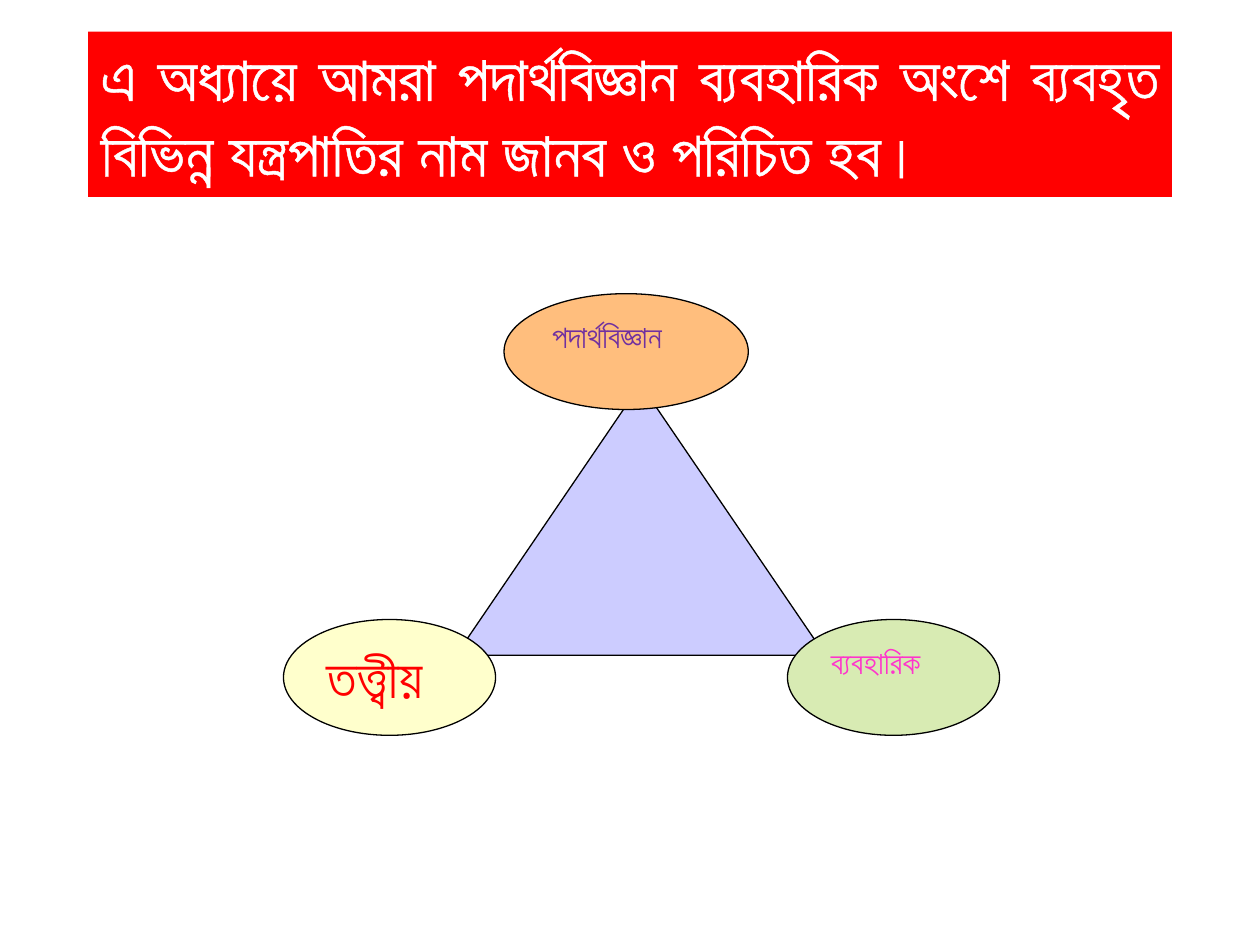
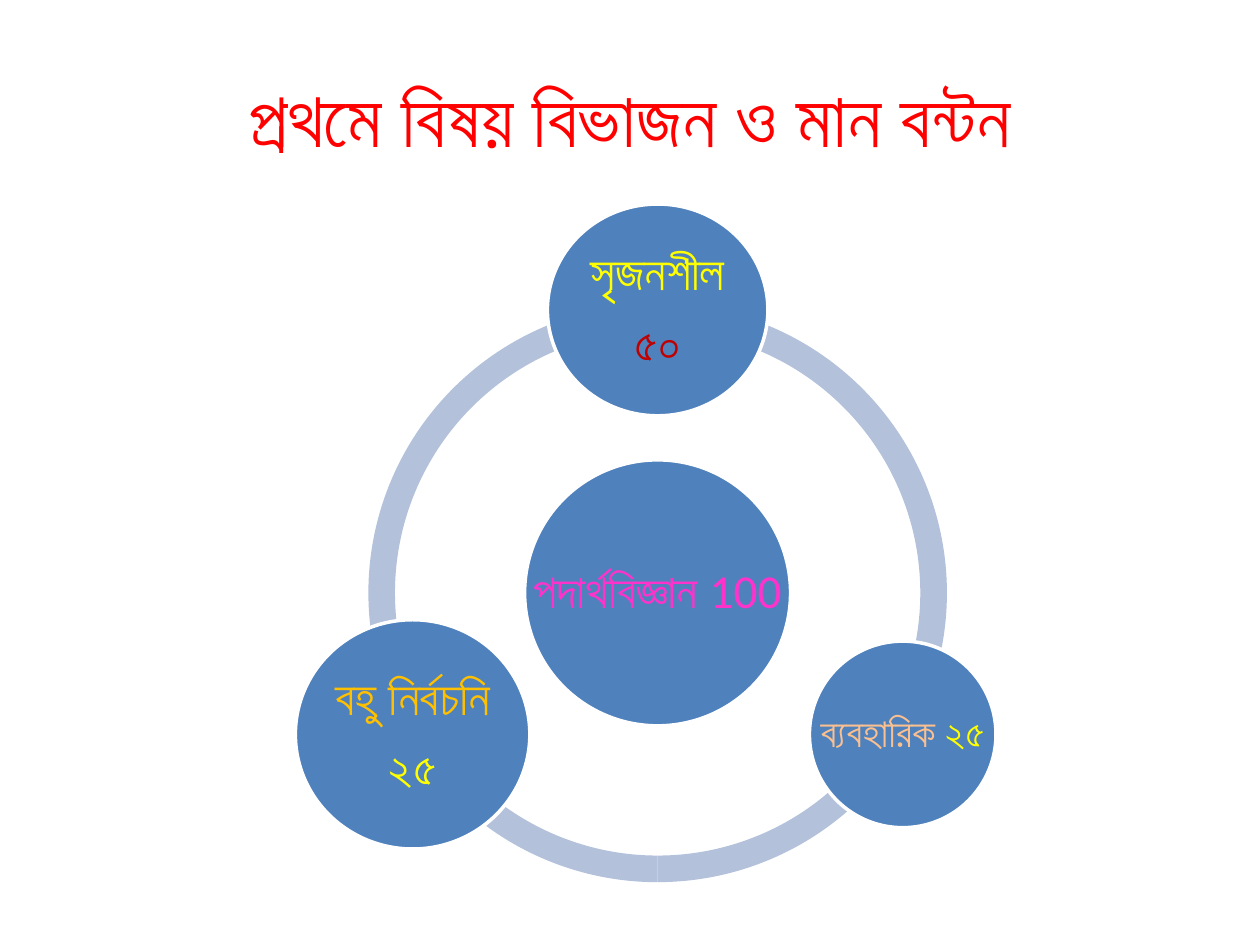
from math import cos, radians, sin

from lxml.etree import SubElement
from pptx import Presentation
from pptx.dml.color import RGBColor
from pptx.enum.shapes import MSO_SHAPE
from pptx.enum.text import MSO_ANCHOR, MSO_AUTO_SIZE, PP_ALIGN
from pptx.oxml.ns import qn
from pptx.util import Pt

FONT = "Calibri"
TITLE_ONLY = 5
COLORS = {
    "white": "FFFFFF", "black": "000000", "red": "FF0000", "yellow": "FFFF00",
    "pink": "FF33CC", "purple": "7030A0", "dark_red": "C00000",
    "amber": "FFC000", "peach": "FAC090", "blue": "4F81BD", "ring": "B3C1DB",
    "lavender": "CCCCFF", "cream": "FFFFCC", "orange": "FFBE7D", "green": "D8EBB3",
}


def rgb(name):
    return RGBColor.from_string(COLORS[name])


class Deck:
    """Holds the shared style and the slide being built."""

    def __init__(self):
        self.prs = Presentation()
        self.prs.slide_width, self.prs.slide_height = Pt(720), Pt(540)
        self.slide = None

    def new_slide(self):
        self.slide = self.prs.slides.add_slide(self.prs.slide_layouts[TITLE_ONLY])

    def add_lines(self, frame, lines, size, align, spacing=None, after=None):
        """Each line is a list of (text, colour) runs."""
        for i, line in enumerate(lines):
            paragraph = frame.paragraphs[0] if i == 0 else frame.add_paragraph()
            paragraph.alignment = align
            paragraph.line_spacing = spacing
            paragraph.space_after = after
            for text, color in line:
                run = paragraph.add_run()
                run.text = text
                run.font.name, run.font.size = FONT, Pt(size)
                run.font.color.rgb = rgb(color)

    def title(self, text, box, size, color, align=PP_ALIGN.CENTER, anchor=MSO_ANCHOR.MIDDLE):
        heading = self.slide.shapes.title
        heading.left, heading.top, heading.width, heading.height = map(Pt, box)
        frame = heading.text_frame
        frame.word_wrap = True
        frame.auto_size = MSO_AUTO_SIZE.NONE
        frame.vertical_anchor = anchor
        self.add_lines(frame, [[(text, color)]], size, align)
        return heading

    def banner(self, text, box, size):
        """Title on a red band, its letters thickened by a white outline."""
        band = self.title(text, box, size, "white", PP_ALIGN.JUSTIFY, MSO_ANCHOR.TOP)
        band.fill.solid()
        band.fill.fore_color.rgb = rgb("red")
        props = band.text_frame.paragraphs[0].runs[0].font._element
        outline = SubElement(props, qn("a:ln"), w=str(Pt(1.45)))
        fill = SubElement(outline, qn("a:solidFill"))
        SubElement(fill, qn("a:srgbClr"), val=COLORS["white"])
        props.insert(0, outline)

    def shape(self, kind, box, fill, line=None, width=0.75):
        shape = self.slide.shapes.add_shape(kind, *map(Pt, box))
        shape.shadow.inherit = False
        shape.fill.solid()
        shape.fill.fore_color.rgb = rgb(fill)
        if line:
            shape.line.color.rgb = rgb(line)
            shape.line.width = Pt(width)
        else:
            shape.line.fill.background()
        return shape

    def oval(self, text, box, fill, size, color):
        oval = self.shape(MSO_SHAPE.OVAL, box, fill, "black")
        oval.text_frame.vertical_anchor = MSO_ANCHOR.TOP
        self.add_lines(oval.text_frame, [[(text, color)]], size, PP_ALIGN.LEFT)

    def disc(self, center, width, height, lines, size):
        x, y = center
        box = (x - width / 2, y - height / 2, width, height)
        frame = self.shape(MSO_SHAPE.OVAL, box, "blue", "white", 2).text_frame
        frame.word_wrap = False
        frame.vertical_anchor = MSO_ANCHOR.MIDDLE
        frame.margin_left = frame.margin_right = Pt(0)
        frame.margin_top = frame.margin_bottom = Pt(3)
        self.add_lines(frame, lines, size, PP_ALIGN.CENTER, 0.9, Pt(10))

    def arc(self, center, diameter, start, end):
        x, y = center
        box = (x - diameter / 2, y - diameter / 2, diameter, diameter)
        arc = self.shape(MSO_SHAPE.BLOCK_ARC, box, "ring")
        # Angles are stored in 60000ths of a degree, scaled by 100000
        for i, value in enumerate((start * 0.6, end * 0.6, 0.046)):
            arc.adjustments[i] = value


def build_overview(deck):
    deck.new_slide()
    deck.banner("এ অধ্যায়ে আমরা পদার্থবিজ্ঞান ব্যবহারিক অংশে ব্যবহৃত বিভিন্ন "
                "যন্ত্রপাতির নাম জানব ও পরিচিত হব।", (50.4, 18, 619.2, 94.5), 36)

    # Triangle with a branch of the subject at each corner
    deck.shape(MSO_SHAPE.ISOSCELES_TRIANGLE, (260.6, 219.6, 211, 154.8), "lavender", "black")
    deck.oval("তত্ত্বীয়", (162, 354, 121.2, 66.2), "cream", 32, "red")
    deck.oval("পদার্থবিজ্ঞান", (288, 167.8, 139.6, 66.2), "orange", 18, "purple")
    deck.oval("ব্যবহারিক", (450, 354, 121.2, 66.2), "green", 18, "pink")


def build_marks(deck):
    deck.new_slide()
    deck.title("প্রথমে বিষয় বিভাজন ও মান বন্টন", (36, 21.6, 648, 90), 44, "red")

    # Ring and the whole subject at its hub
    hub = (375.8, 338.8)
    for start, end in ((90, 162), (18, 90), (162, 18)):
        deck.arc(hub, 330.6, start, end)
    deck.disc(hub, 152, 152, [[("পদার্থবিজ্ঞান 100", "pink")]], 27)

    # Parts of the marks, a third of a turn apart
    orbit = 161.7
    parts = [
        (126, 121, 28, [[("সৃজনশীল", "yellow")], [("৫০", "dark_red")]]),
        (106.6, 106.6, 23, [[("ব্যবহারিক ", "peach"), ("২৫", "yellow")]]),
        (134, 131, 28, [[("বহু নির্বচনি", "amber")], [("২৫", "yellow")]]),
    ]
    for i, (width, height, size, lines) in enumerate(parts):
        angle = radians(-90 + 120 * i)
        center = (hub[0] + orbit * cos(angle), hub[1] + orbit * sin(angle))
        deck.disc(center, width, height, lines, size)


def main():
    deck = Deck()
    build_overview(deck)
    build_marks(deck)
    deck.prs.save("out.pptx")


if __name__ == "__main__":
    main()
